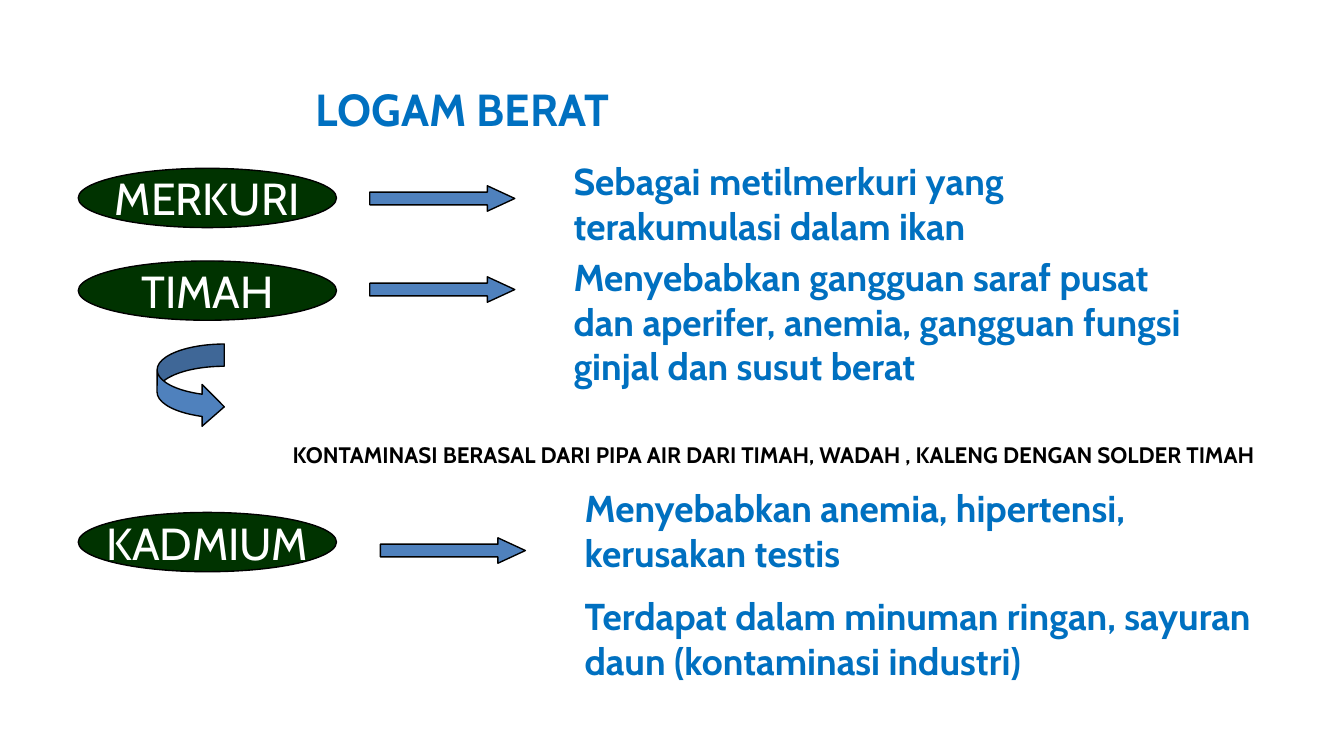
"""Build the slide on heavy metals in food."""
from pptx import Presentation
from pptx.dml.color import RGBColor as Rgb
from pptx.enum.shapes import MSO_SHAPE as Kind
from pptx.enum.text import MSO_ANCHOR as Anchor, PP_ALIGN as Align
from pptx.util import Cm, Pt

INK = {"text": "0070C0", "note": "000000", "oval": "003300",
       "arrow": "4F81BD", "line": "000000", "label": "FFFFFF"}
FONT = "Cabin"

METALS = [("MERKURI", 3.18), ("TIMAH", 4.93), ("KADMIUM", 9.68)]
ARROWS = [(6.99, 3.51), (6.99, 5.23), (7.19, 10.16)]
TEXTS = [
    (["LOGAM BERAT"], (5.72, 1.42, 10.59, 1.27), 24, "text"),
    (["Sebagai metilmerkuri yang terakumulasi dalam ikan"],
     (10.59, 2.87, 12.07, 1.96), 20, "text"),
    (["Menyebabkan gangguan saraf pusat dan aperifer, anemia, "
      "gangguan fungsi ginjal dan susut berat"],
     (10.59, 4.67, 12.27, 3.68), 20, "text"),
    (["KONTAMINASI BERASAL DARI PIPA AIR DARI TIMAH, WADAH , "
      "KALENG DENGAN SOLDER TIMAH"],
     (5.28, 8.2, 20.12, 1.27), 12, "note"),
    (["Menyebabkan anemia, hipertensi, kerusakan testis",
      "Terdapat dalam minuman ringan, sayuran daun (kontaminasi industri)"],
     (10.8, 9.04, 13.77, 4.11), 20, "text"),
]


def tint(name):
    return Rgb.from_string(INK[name])


def style(para, size, ink, bold):
    for run in para.runs:
        font = run.font
        font.name, font.size, font.bold = FONT, Pt(size), bold
        font.color.rgb = tint(ink)


def draw(slide, kind, box, fill, adjust=()):
    shape = slide.shapes.add_shape(kind, *map(Cm, box))
    shape.shadow.inherit = False
    shape.fill.solid()
    shape.fill.fore_color.rgb = tint(fill)
    shape.line.color.rgb = tint("line")
    shape.line.width = Pt(0.75)
    for i, value in enumerate(adjust):
        shape.adjustments[i] = value
    return shape


def label(shape, text):
    frame = shape.text_frame
    frame.text = text
    frame.word_wrap = False
    frame.vertical_anchor = Anchor.MIDDLE
    para = frame.paragraphs[0]
    para.alignment = Align.CENTER
    style(para, 24, "label", False)


def write(slide, lines, box, size, ink):
    frame = slide.shapes.add_textbox(*map(Cm, box)).text_frame
    frame.word_wrap = True
    frame.text = "\n".join(lines)
    for i, para in enumerate(frame.paragraphs):
        if i:
            para.space_before = Pt(size / 2)
        style(para, size, ink, True)


def main():
    deck = Presentation()
    deck.slide_width, deck.slide_height = Cm(25.4), Cm(14.28)
    slide = deck.slides.add_slide(deck.slide_layouts[6])
    for name, top in METALS:
        label(draw(slide, Kind.OVAL, (1.48, top, 4.88, 1.12), "oval"), name)
    for left, top in ARROWS:
        draw(slide, Kind.RIGHT_ARROW, (left, top, 2.74, 0.48), "arrow",
             (0.5, 1.08))
    draw(slide, Kind.CURVED_RIGHT_ARROW, (2.97, 6.5, 1.27, 1.58), "arrow",
         (0.33, 0.67, 0.33))
    for item in TEXTS:
        write(slide, *item)
    deck.save("out.pptx")


if __name__ == "__main__":
    main()
